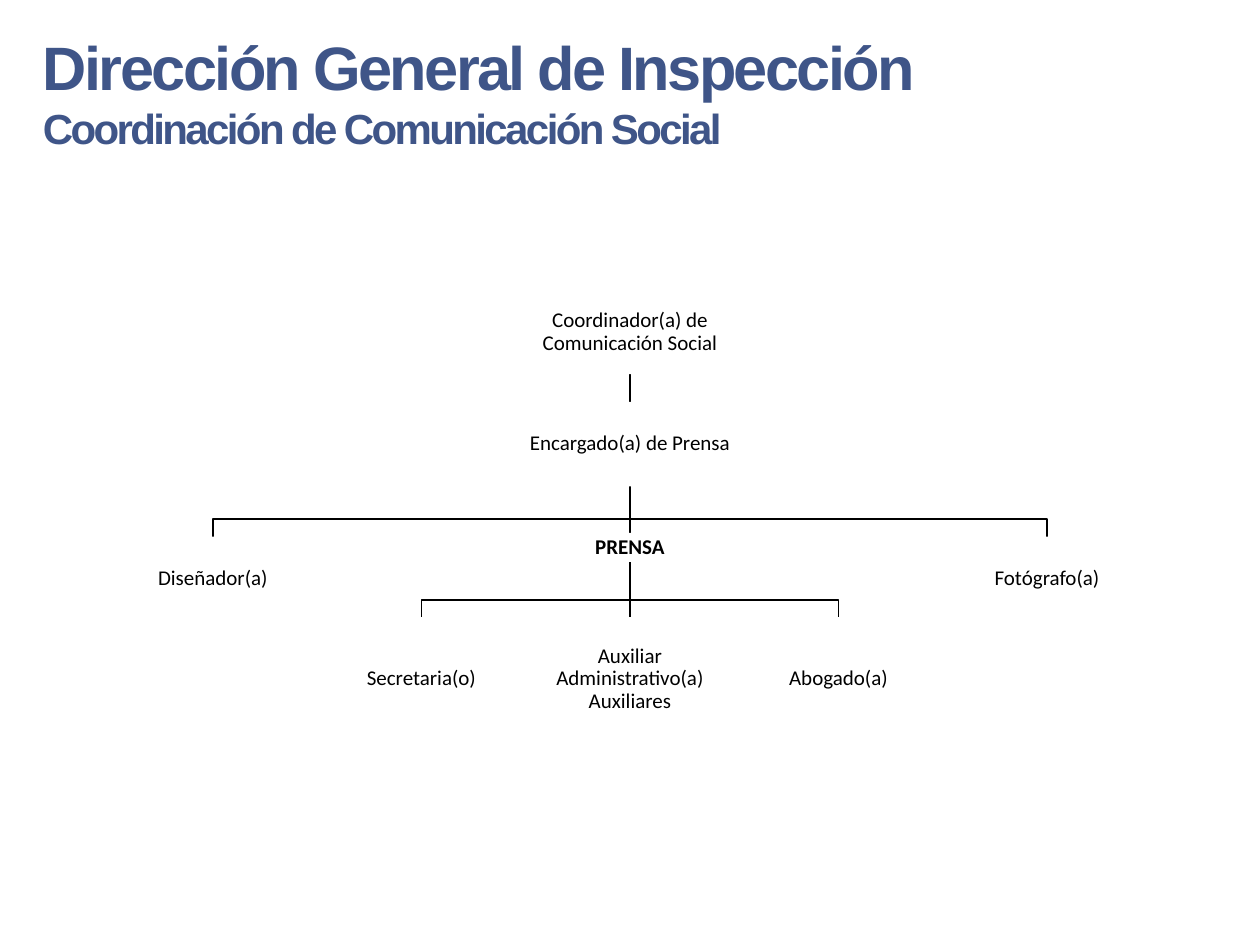
from dataclasses import dataclass

from lxml import etree
from pptx import Presentation
from pptx.dml.color import RGBColor
from pptx.enum.shapes import MSO_CONNECTOR, MSO_SHAPE
from pptx.enum.text import MSO_ANCHOR, PP_ALIGN
from pptx.oxml.ns import qn
from pptx.util import Inches, Pt

RECTANGLE = MSO_SHAPE.RECTANGLE
STRAIGHT = MSO_CONNECTOR.STRAIGHT
TOP, MIDDLE = MSO_ANCHOR.TOP, MSO_ANCHOR.MIDDLE
LEFT, CENTER = PP_ALIGN.LEFT, PP_ALIGN.CENTER
COLORS = {"title": "3F5588", "text": "000000", "line": "000000", "box": "FFFFFF"}
TITLE_ONLY = 5


@dataclass
class Node:
    """A position in the chart: centre x and top y, in inches."""
    lines: list
    center: float
    top: float
    width: float = 1.37
    height: float = 0.67
    bold: bool = False

    @property
    def bottom(self):
        return self.top + self.height


def color(name):
    return RGBColor.from_string(COLORS[name])


def write(para, text, size=12, font="Calibri", ink="text", bold=False,
          align=CENTER, line_spacing=0.9, tracking=None):
    para.alignment = align
    para.line_spacing = line_spacing
    span = para.add_run()
    span.text = text
    span.font.size = Pt(size)
    span.font.name = font
    span.font.bold = bold
    span.font.color.rgb = color(ink)
    if tracking is not None:
        span.font._element.set("spc", str(int(tracking * 100)))


class OrgChart:
    def __init__(self, slide, bar_gap=0.14, line_width=1, margin=0.01):
        self.slide = slide
        self.bar_gap = bar_gap
        self.line_width = Pt(line_width)
        self.margin = Inches(margin)

    def title(self, lines, left, top, width, height):
        box = self.slide.shapes.title
        box.left, box.top = Inches(left), Inches(top)
        box.width, box.height = Inches(width), Inches(height)
        frame = box.text_frame
        frame.vertical_anchor = TOP
        for index, (text, size) in enumerate(lines):
            para = frame.add_paragraph() if index else frame.paragraphs[0]
            para.space_before = Pt(0)
            write(para, text, size=size, font="Arial", ink="title", bold=True,
                  align=LEFT, line_spacing=1.0, tracking=-1.5)

    def box(self, node):
        shape = self.slide.shapes.add_shape(
            RECTANGLE, Inches(node.center - node.width / 2), Inches(node.top),
            Inches(node.width), Inches(node.height))
        shape.shadow.inherit = False
        shape.fill.solid()
        shape.fill.fore_color.rgb = color("box")
        shape.line.fill.background()
        frame = shape.text_frame
        frame.word_wrap = True
        frame.vertical_anchor = MIDDLE
        frame.margin_left = frame.margin_right = self.margin
        frame.margin_top = frame.margin_bottom = self.margin
        for index, text in enumerate(node.lines):
            para = frame.add_paragraph() if index else frame.paragraphs[0]
            write(para, text, bold=node.bold)

    def link(self, parent, child):
        """Join two nodes, with a bent line when they are not aligned."""
        if parent.center == child.center:
            line = self.slide.shapes.add_connector(
                STRAIGHT, Inches(parent.center), Inches(parent.bottom),
                Inches(child.center), Inches(child.top))
            etree.SubElement(line._element.spPr, qn("a:effectLst"))
        else:
            bar = child.top - self.bar_gap
            points = [(parent.center, bar), (child.center, bar),
                      (child.center, child.top)]
            builder = self.slide.shapes.build_freeform(
                Inches(parent.center), Inches(parent.bottom))
            builder.add_line_segments(
                [(Inches(x), Inches(y)) for x, y in points], close=False)
            line = builder.convert_to_shape()
            line.shadow.inherit = False
            line.fill.background()
        line.line.color.rgb = color("line")
        line.line.width = self.line_width


def main():
    deck = Presentation()
    deck.slide_width, deck.slide_height = Inches(10), Inches(7.5)
    chart = OrgChart(deck.slides.add_slide(deck.slide_layouts[TITLE_ONLY]))
    chart.title([("Dirección General de Inspección", 35),
                 ("Coordinación de Comunicación Social", 24)],
                0.24, 0.18, 7.46, 1.09)

    middle, step = 5, 1.655
    coordinator = Node(["Coordinador(a) de Comunicación Social"], middle, 2.3, 2.02)
    manager = Node(["Encargado(a) de Prensa"], middle, 3.19, 2.02)
    press = Node(["PRENSA"], middle, 4.23, height=0.23, bold=True)
    designer = Node(["Diseñador(a)"], middle - 2 * step, 4.26)
    photographer = Node(["Fotógrafo(a)"], middle + 2 * step, 4.26)
    staff = [
        Node(lines, middle + offset * step, 4.9, height=0.98)
        for offset, lines in ((-1, ["Secretaria(o)"]),
                              (0, ["Auxiliar Administrativo(a)", "Auxiliares"]),
                              (1, ["Abogado(a)"]))
    ]
    tree = [(coordinator, [manager]),
            (manager, [designer, press, photographer]),
            (press, staff)]

    for parent, children in tree:
        for child in children:
            chart.link(parent, child)
    chart.box(coordinator)
    for _, children in tree:
        for child in children:
            chart.box(child)
    deck.save("out.pptx")


if __name__ == "__main__":
    main()
